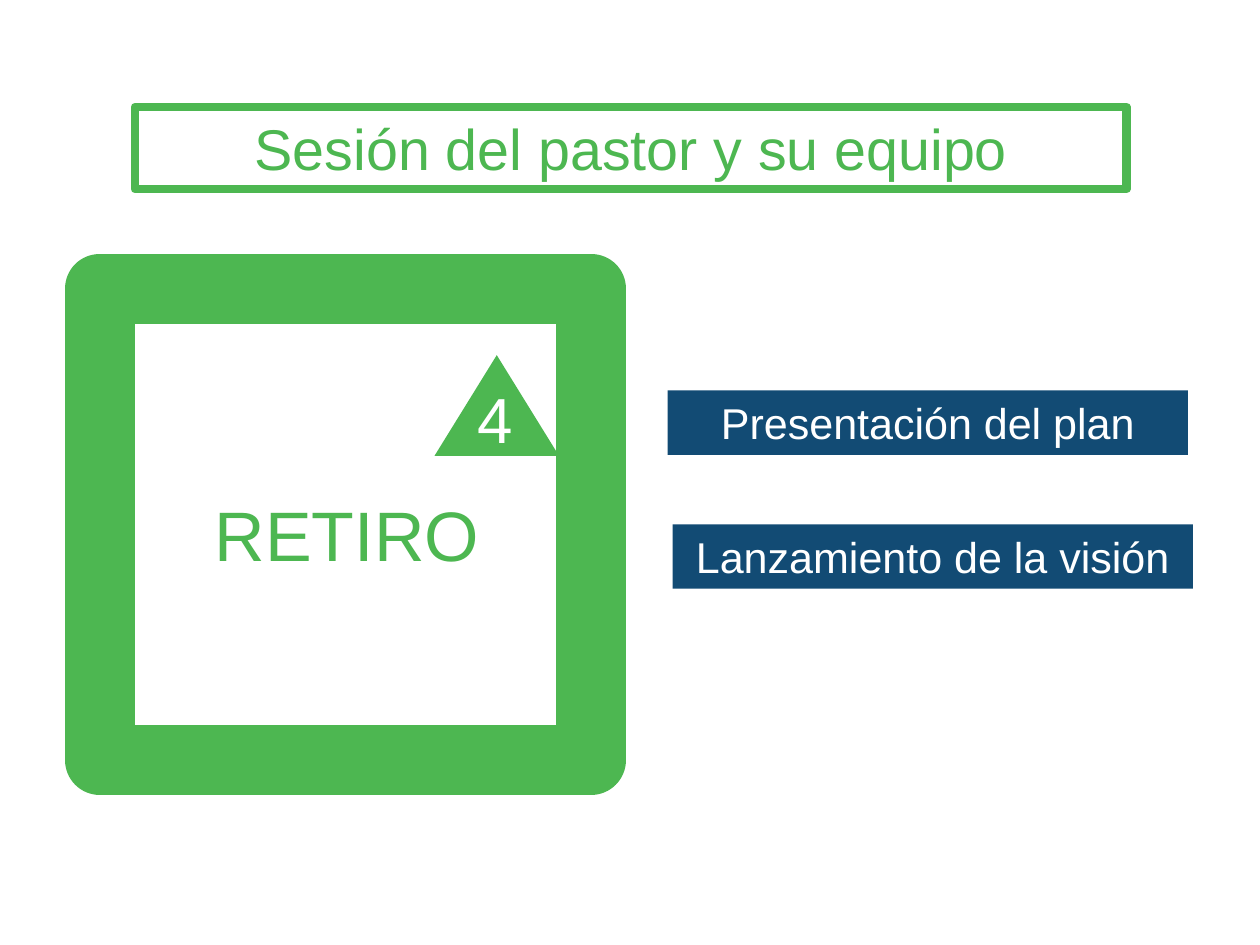
from lxml.etree import SubElement
from pptx import Presentation
from pptx.dml.color import RGBColor
from pptx.enum.shapes import MSO_SHAPE
from pptx.enum.text import MSO_ANCHOR, PP_ALIGN
from pptx.oxml.ns import qn
from pptx.util import Cm, Pt

GREEN = RGBColor(0x4D, 0xB7, 0x51)
NAVY = RGBColor(0x12, 0x4B, 0x74)
WHITE = RGBColor(0xFF, 0xFF, 0xFF)


def write_text(box, text, size, color, align=PP_ALIGN.CENTER, anchor=MSO_ANCHOR.TOP):
    frame = box.text_frame
    frame.word_wrap = True
    frame.vertical_anchor = anchor
    para = frame.paragraphs[0]
    para.alignment = align
    span = para.add_run()
    span.text = text
    font_format = {"name": "Arial", "size": Pt(size)}
    for name, value in font_format.items():
        setattr(span.font, name, value)
    span.font.color.rgb = color


def add_panel(page, kind, bounds, fill=None, border=None, border_width=0):
    panel = page.shapes.add_shape(kind, *map(Cm, bounds))
    panel.shadow.inherit = False
    if fill is None:
        panel.fill.background()
    else:
        panel.fill.solid()
        panel.fill.fore_color.rgb = fill
    if border is None:
        panel.line.fill.background()
    else:
        panel.line.color.rgb = border
        panel.line.width = Pt(border_width)
        outline = panel.element.spPr.find(qn("a:ln"))
        SubElement(outline, qn("a:round"))
    return panel


def add_label(page, bounds, text, size, color, align=PP_ALIGN.CENTER):
    box = page.shapes.add_textbox(*map(Cm, bounds))
    write_text(box, text, size, color, align)


def add_banner(page, left, top, text):
    banner = add_panel(page, MSO_SHAPE.RECTANGLE, (left, top, 10.49, 1.3), NAVY)
    write_text(banner, text, 24.6, WHITE)


def add_title(page, text):
    title = add_panel(page, MSO_SHAPE.RECTANGLE, (2.72, 2.16, 19.99, 1.65), WHITE, GREEN, 5)
    write_text(title, text, 32.8, GREEN)


def add_retreat_card(page):
    add_panel(page, MSO_SHAPE.RECTANGLE, (2.01, 5.82, 9.91, 9.5), border=GREEN, border_width=40)
    add_label(page, (3.3, 9.78, 7.39, 1.96), "RETIRO", 40, GREEN)
    add_panel(page, MSO_SHAPE.ISOSCELES_TRIANGLE, (8.76, 7.16, 2.51, 2.03), GREEN)
    add_label(page, (9.37, 7.54, 1.55, 1.8), "4", 36.4, WHITE, PP_ALIGN.LEFT)


def main():
    deck = Presentation()
    deck.slide_width = Cm(25.4)
    deck.slide_height = Cm(19.05)
    page = deck.slides.add_slide(deck.slide_layouts[6])
    add_retreat_card(page)
    add_banner(page, 13.56, 10.57, "Lanzamiento de la visión")
    add_title(page, "Sesión del pastor y su equipo")
    add_banner(page, 13.46, 7.87, "Presentación del plan")
    deck.save("out.pptx")


if __name__ == "__main__":
    main()
